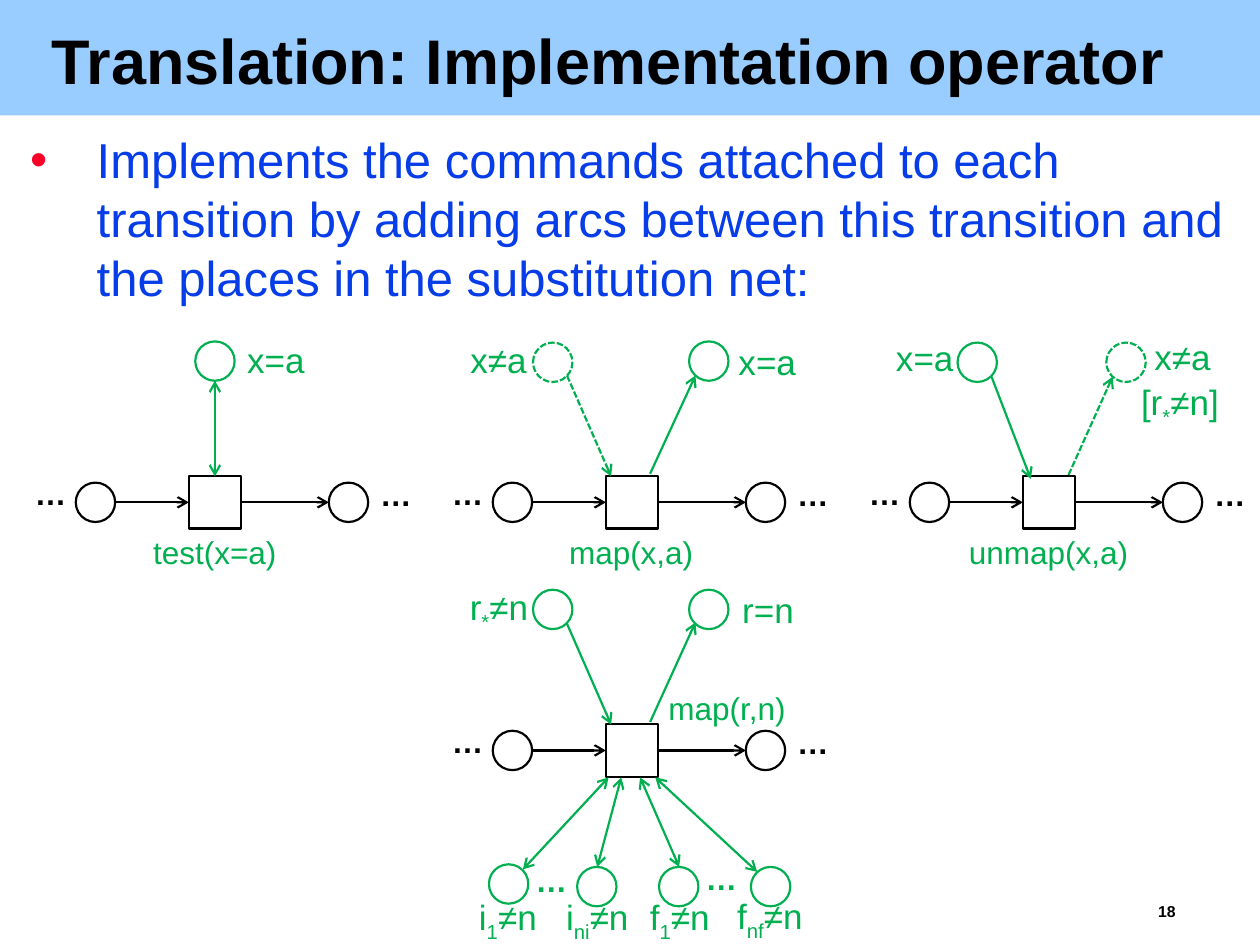
from lxml import etree
from pptx import Presentation
from pptx.dml.color import RGBColor
from pptx.enum.dml import MSO_LINE
from pptx.enum.shapes import MSO_CONNECTOR, MSO_SHAPE
from pptx.enum.text import MSO_ANCHOR, PP_ALIGN
from pptx.oxml.ns import qn
from pptx.util import Pt

STRAIGHT = MSO_CONNECTOR.STRAIGHT
OVAL, RECTANGLE = MSO_SHAPE.OVAL, MSO_SHAPE.RECTANGLE
DASH = MSO_LINE.SQUARE_DOT
TOP = MSO_ANCHOR.TOP
LEFT, CENTER = PP_ALIGN.LEFT, PP_ALIGN.CENTER
BLACK, GREEN, BLUE, RED, SKY = "000000", "00B050", "063DE8", "FC0128", "99CCFF"
PLACE = 22.5
BOX = 30
color = RGBColor.from_string

prs = Presentation()
prs.slide_width, prs.slide_height = Pt(720), Pt(540)
slide = prs.slides.add_slide(prs.slide_layouts[6])
shapes = slide.shapes


def add_text(text, x, y, width, height, size, ink, bold=False, align=CENTER, wrap=False):
    frame = shapes.add_textbox(Pt(x), Pt(y), Pt(width), Pt(height)).text_frame
    frame.margin_left = frame.margin_right = frame.margin_top = frame.margin_bottom = 0
    frame.word_wrap = wrap
    frame.vertical_anchor = TOP
    paragraph = frame.paragraphs[0]
    paragraph.alignment = align
    for index, piece in enumerate(text.split("_")):
        run = paragraph.add_run()
        run.text = piece
        run.font.size, run.font.bold, run.font.name = Pt(size), bold, "Arial"
        run.font.color.rgb = color(ink)
        if index % 2:
            run.font._element.set("baseline", "-25000")
    return paragraph


def style_line(item, ink, dashed=False, arrows=()):
    item.line.color.rgb = color(ink)
    item.line.width = Pt(1.25)
    if dashed:
        item.line.dash_style = DASH
    for end in arrows:
        etree.SubElement(item.line._get_or_add_ln(), qn(f"a:{end}"), type="arrow")
    if arrows:
        etree.SubElement(item._element.spPr, qn("a:effectLst"))
    else:
        item.fill.background()
        item.shadow.inherit = False


banner = shapes.add_shape(RECTANGLE, 0, 0, Pt(720), Pt(66))
banner.fill.solid()
banner.fill.fore_color.rgb = color(SKY)
banner.line.fill.background()
banner.shadow.inherit = False

title = add_text("Translation: Implementation operator", 29.5, 18, 655, 43, 36, BLACK,
                 bold=True, align=LEFT, wrap=True)
title.line_spacing = 0.87
add_text("18", 657.4, 515.5, 18.7, 12, 9, BLACK, bold=True)

summary = add_text(
    "Implements the commands attached to each transition by adding arcs between "
    "this transition and the places in the substitution net:",
    17.3, 74.2, 689, 436, 28, BLUE, align=LEFT, wrap=True)
summary.space_before = Pt(5.6)
bullet_props = summary._p.get_or_add_pPr()
bullet_props.set("marL", str(Pt(38)))
bullet_props.set("indent", str(Pt(-38)))
bullet_color = etree.SubElement(bullet_props, qn("a:buClr"))
etree.SubElement(bullet_color, qn("a:srgbClr"), val=RED)
etree.SubElement(bullet_props, qn("a:buFont"), typeface="Arial")
etree.SubElement(bullet_props, qn("a:buChar"), char="•")

places = [
    (111.6, 195.1, GREEN, False),
    (304.6, 195.8, GREEN, True), (393.8, 195.1, GREEN, False),
    (547.2, 195.8, GREEN, False), (632.2, 195.8, GREEN, True),
    (304.6, 337, GREEN, False), (393.8, 337, GREEN, False),
    (279.4, 493.9, GREEN, False), (329.8, 495.4, GREEN, False),
    (376.6, 495.4, GREEN, False), (429.1, 495.4, GREEN, False),
]
one_way, two_way = ("tailEnd",), ("headEnd", "tailEnd")
arcs = [
    (122.8, 217.6, 122.8, 272.2, GREEN, False, two_way),
    (324, 214.6, 349.2, 272.2, GREEN, True, one_way),
    (371.5, 270.7, 397.4, 214.6, GREEN, False, one_way),
    (566.6, 215.3, 589, 273.6, GREEN, False, one_way),
    (610.6, 271.4, 635.8, 215.3, GREEN, True, one_way),
    (324, 356.4, 349.2, 414, GREEN, False, one_way),
    (371.5, 412.6, 397.4, 355.7, GREEN, False, one_way),
    (347.8, 444.2, 298.8, 496.8, GREEN, False, two_way),
    (355, 444.2, 341.3, 495.4, GREEN, False, two_way),
    (365.8, 444.2, 388.1, 495.4, GREEN, False, two_way),
    (374.4, 444.2, 432.7, 498.2, GREEN, False, two_way),
]
ellipses = [(306, 491.8, GREEN), (403.2, 491, GREEN)]

for net_x, net_y in [(43.3, 275.8), (281.6, 275.8), (519.9, 275.8), (281.6, 417.6)]:
    transition_x = net_x + 64.6
    output_x = net_x + 144.6
    axis_y = net_y + PLACE / 2
    transition = shapes.add_shape(RECTANGLE, Pt(transition_x), Pt(axis_y - BOX / 2),
                                  Pt(BOX), Pt(BOX))
    style_line(transition, BLACK)
    places += [(net_x, net_y, BLACK, False), (output_x, net_y, BLACK, False)]
    arcs += [(net_x + PLACE, axis_y, transition_x, axis_y, BLACK, False, one_way),
             (transition_x + BOX, axis_y, output_x, axis_y, BLACK, False, one_way)]
    ellipses += [(net_x - 23.4, net_y - 5, BLACK), (net_x + 173.9, net_y - 4.4, BLACK)]

for x, y, ink, dashed in places:
    style_line(shapes.add_shape(OVAL, Pt(x), Pt(y), Pt(PLACE), Pt(PLACE)), ink, dashed)

for x1, y1, x2, y2, ink, dashed, arrows in arcs:
    arc = shapes.add_connector(STRAIGHT, Pt(x1), Pt(y1), Pt(x2), Pt(y2))
    style_line(arc, ink, dashed, arrows)

for x, y, ink in ellipses:
    add_text("…", x, y, 18, 21.6, 18, ink, bold=True)

for command, x, y, width in [
    ("test(x=a)", 87.1, 304.6, 71.3), ("map(x,a)", 324.7, 304.6, 72),
    ("unmap(x,a)", 553, 304.6, 92.2), ("map(r,n)", 381.6, 393.8, 67.7),
]:
    add_text(command, x, y, width, 21.6, 18, GREEN)

for condition, x, y, width in [
    ("x=a", 141.1, 193.7, 33.1),
    ("x≠a", 268.6, 193.7, 32.4), ("x=a", 421.9, 194.4, 33.1),
    ("x=a", 511.9, 192.2, 33.1), ("x≠a", 659.5, 191.5, 32.4),
    ("[r_*_≠n]", 651.6, 217.4, 45.4),
    ("r_*_≠n", 267.8, 334.8, 34.6), ("r=n", 424.1, 336.2, 29.5),
    ("i_1_≠n", 272.9, 511.9, 34.6), ("i_ni_≠n", 322.6, 511.9, 37.4),
    ("f_1_≠n", 370.8, 511.9, 35.3), ("f_nf_≠n", 420.5, 511.2, 38.9),
]:
    add_text(condition, x, y, width, 24.5, 20, GREEN)

prs.save("out.pptx")
